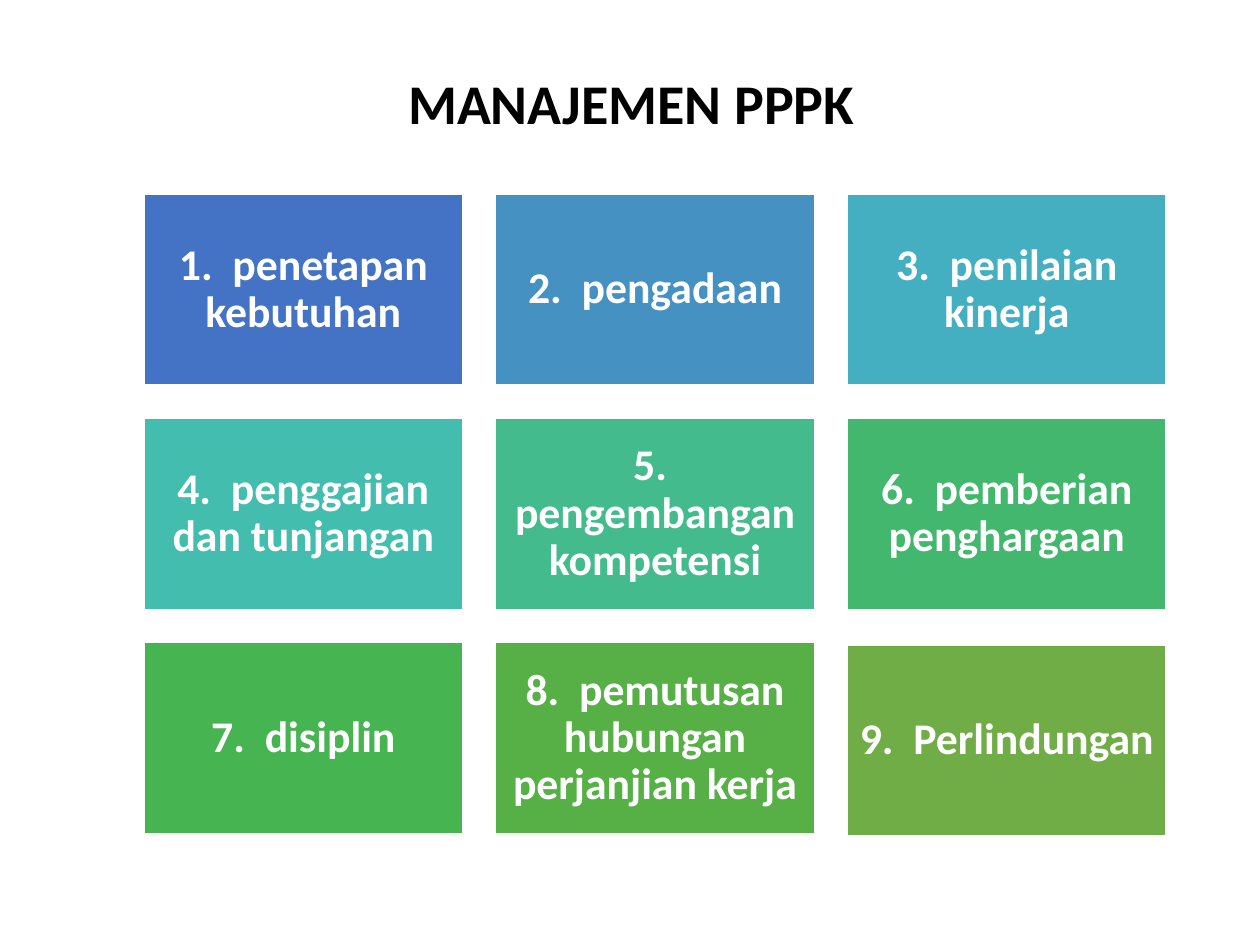
import pptx
import pptx.dml.color
import pptx.enum.shapes
import pptx.enum.text
import pptx.util

Cm = pptx.util.Cm
Pt = pptx.util.Pt

COLORS = {
    "paper": "FFFFFF",
    "title": "000000",
    "tile_1": "4472C4",
    "tile_2": "4491C2",
    "tile_3": "43AFC0",
    "tile_4": "43BDAE",
    "tile_5": "43BB8D",
    "tile_6": "44B76E",
    "tile_7": "45B451",
    "tile_8": "56B046",
    "tile_9": "70AD47",
}
TOPICS = [
    "penetapan kebutuhan",
    "pengadaan",
    "penilaian kinerja",
    "penggajian dan tunjangan",
    "pengembangan kompetensi",
    "pemberian penghargaan",
    "disiplin",
    "pemutusan hubungan perjanjian kerja",
    "Perlindungan",
]
COLUMNS = 3
GAP = 0.66
LAST_TILE_DROP = 0.05
TITLE_BOX = (1.3, 0.74, 22.86, 2.79)
GRID_BOX = (2.9, 3.91, 20.61, 12.9)

FRAME_FORMAT = {
    "word_wrap": True,
    "vertical_anchor": pptx.enum.text.MSO_ANCHOR.MIDDLE,
}
TILE_MARGINS = {
    f"margin_{side}": Cm(0.25) for side in ("left", "top", "right", "bottom")
}
PARAGRAPH_FORMAT = {
    "alignment": pptx.enum.text.PP_ALIGN.CENTER,
    "line_spacing": 0.9,
    "space_before": Pt(0),
}
FONT_FORMAT = {"name": "Calibri", "bold": True}


def apply_format(target, values):
    for name, value in values.items():
        setattr(target, name, value)


def color(name):
    return pptx.dml.color.RGBColor.from_string(COLORS[name])


def write_text(shape, text, size, color_name):
    frame = shape.text_frame
    apply_format(frame, FRAME_FORMAT)
    para = frame.paragraphs[0]
    apply_format(para, PARAGRAPH_FORMAT)
    span = para.add_run()
    span.text = text
    apply_format(span.font, FONT_FORMAT | {"size": Pt(size)})
    span.font.color.rgb = color(color_name)


def place_title(page, box):
    title = page.shapes.title
    names = ("left", "top", "width", "height")
    apply_format(title, dict(zip(names, map(Cm, box))))
    title.fill.solid()
    title.fill.fore_color.rgb = color("paper")
    write_text(title, "MANAJEMEN PPPK", 32, "title")


def place_tile(page, box, number, topic):
    tile = page.shapes.add_shape(
        pptx.enum.shapes.MSO_SHAPE.RECTANGLE, *map(Cm, box)
    )
    tile.shadow.inherit = False
    tile.fill.solid()
    tile.fill.fore_color.rgb = color(f"tile_{number}")
    tile.line.color.rgb = color("paper")
    tile.line.width = Pt(1)
    apply_format(tile.text_frame, TILE_MARGINS)
    write_text(tile, f"{number}.  {topic}", 25, "paper")


def place_grid(page, box):
    left, top, width, height = box
    rows = len(TOPICS) // COLUMNS
    tile_width = (width - GAP * (COLUMNS - 1)) / COLUMNS
    tile_height = (height - GAP * (rows - 1)) / rows
    for index, topic in enumerate(TOPICS):
        row, column = divmod(index, COLUMNS)
        drop = LAST_TILE_DROP if index == len(TOPICS) - 1 else 0
        tile_box = (
            left + column * (tile_width + GAP),
            top + row * (tile_height + GAP) + drop,
            tile_width,
            tile_height,
        )
        place_tile(page, tile_box, index + 1, topic)


def main():
    deck = pptx.Presentation()
    deck.slide_width = Cm(25.4)
    deck.slide_height = Cm(19.05)
    page = deck.slides.add_slide(deck.slide_layouts.get_by_name("Title Only"))
    place_title(page, TITLE_BOX)
    place_grid(page, GRID_BOX)
    deck.save("out.pptx")


if __name__ == "__main__":
    main()
